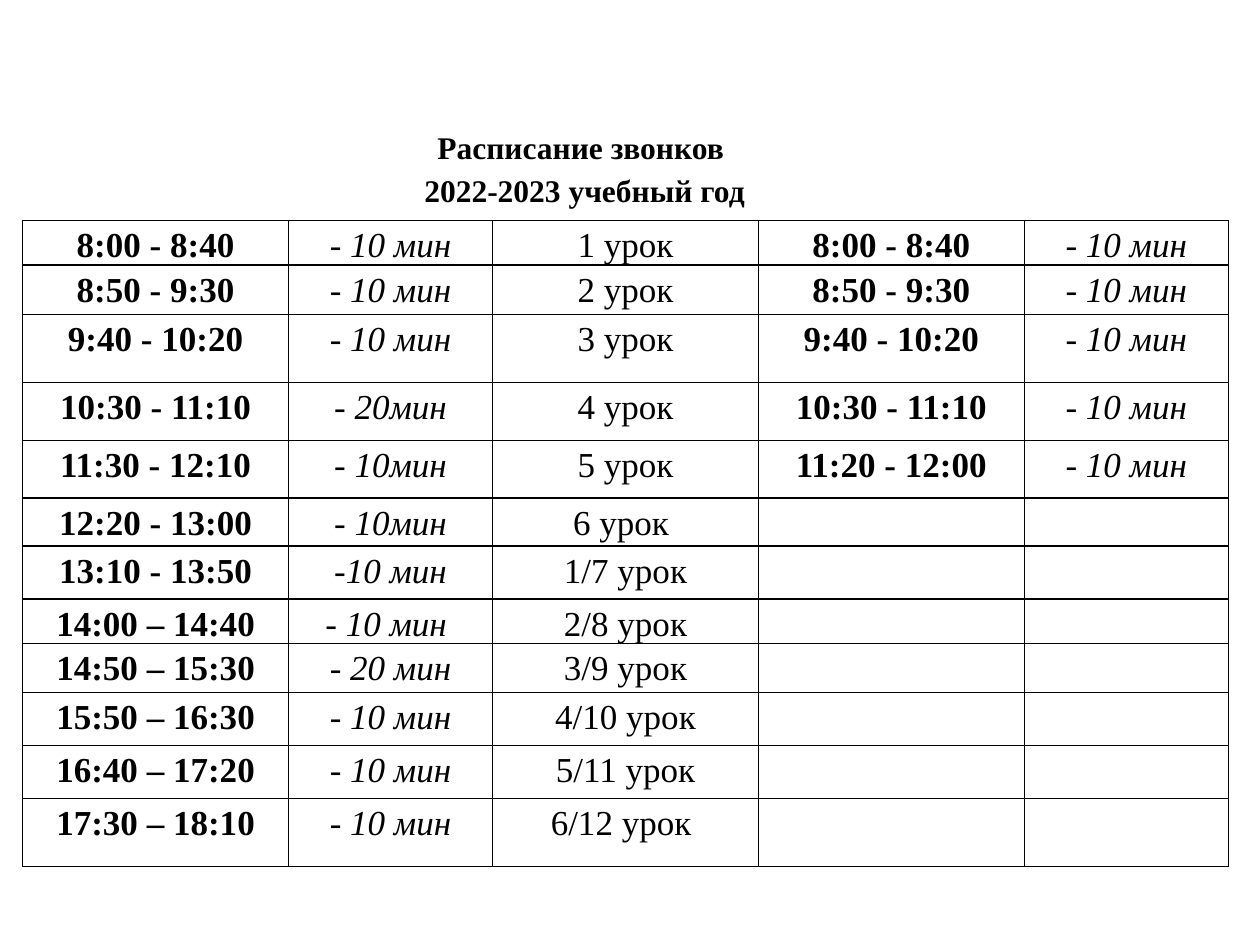
from typing import NamedTuple

from lxml.etree import SubElement
from pptx import Presentation
from pptx.dml.color import RGBColor as RGB
from pptx.enum.text import MSO_AUTO_SIZE as AutoSize, PP_ALIGN as Align
from pptx.oxml.ns import qn
from pptx.util import Inches, Pt

COLORS = {"ink": "000000", "paper": "FFFFFF"}
FONT = "Times New Roman"


class Lesson(NamedTuple):
    height: float
    time: str
    pause: str
    name: str
    short_time: str = ""
    short_pause: str = ""


PAUSE = "- 10 мин"
LESSONS = [
    Lesson(0.35, "8:00 - 8:40", PAUSE, "1 урок", "8:00 - 8:40", PAUSE),
    Lesson(0.39, "8:50 - 9:30", PAUSE, "2 урок", "8:50 - 9:30", PAUSE),
    Lesson(0.54, "9:40 - 10:20", PAUSE, "3 урок", "9:40 - 10:20", PAUSE),
    Lesson(0.46, "10:30 - 11:10", "- 20мин", "4 урок", "10:30 - 11:10", PAUSE),
    Lesson(0.46, "11:30 - 12:10", "- 10мин", "5 урок", "11:20 - 12:00", PAUSE),
    Lesson(0.38, "12:20 - 13:00", "- 10мин", "6 урок "),
    Lesson(0.42, "13:10 - 13:50", "-10 мин", "1/7 урок"),
    Lesson(0.33, "14:00 – 14:40", "- 10 мин ", "2/8 урок"),
    Lesson(0.39, "14:50 – 15:30", "- 20 мин", "3/9 урок"),
    Lesson(0.42, "15:50 – 16:30", PAUSE, "4/10 урок"),
    Lesson(0.42, "16:40 – 17:20", PAUSE, "5/11 урок"),
    Lesson(0.54, "17:30 – 18:10", PAUSE, "6/12 урок "),
]


class Column(NamedTuple):
    width: float
    style: dict


TIME = Column(2.11, {"bold": True, "italic": False})
BREAK = Column(1.62, {"bold": False, "italic": True})
NAME = Column(2.11, {"bold": False, "italic": False})
COLUMNS = [TIME, BREAK, NAME, TIME, BREAK]


def write(p, text: str, size: float, style: dict) -> None:
    p.alignment = Align.CENTER
    p.line_spacing = 1.15
    r = p.add_run()
    r.text = text
    for key, value in {"name": FONT, "size": Pt(size), **style}.items():
        setattr(r.font, key, value)
    r.font.color.rgb = RGB.from_string(COLORS["ink"])


def add_borders(cell) -> None:
    """Draw four thin lines; they must precede the cell fill in the XML."""
    props = cell._tc.get_or_add_tcPr()
    for side in ("lnL", "lnR", "lnT", "lnB"):
        line = SubElement(props, qn(f"a:{side}"), w=str(Pt(1)))
        fill = SubElement(line, qn("a:solidFill"))
        SubElement(fill, qn("a:srgbClr"), val=COLORS["ink"])


def fill_cell(cell, text: str, style: dict) -> None:
    margins = {"margin_left": 0.01, "margin_right": 0.01,
               "margin_top": 0, "margin_bottom": 0}
    for key, value in margins.items():
        setattr(cell, key, Inches(value))
    add_borders(cell)
    cell.fill.background()
    if text:
        write(cell.text_frame.paragraphs[0], text, 20, style)


def add_timetable(s) -> None:
    width = sum(c.width for c in COLUMNS)
    height = sum(lesson.height for lesson in LESSONS)
    table = s.shapes.add_table(len(LESSONS), len(COLUMNS), Inches(0.18),
                               Inches(1.75), Inches(width), Inches(height)).table
    table.first_row = table.horz_banding = False
    for i, column in enumerate(COLUMNS):
        table.columns[i].width = Inches(column.width)
    for i, (row_height, *texts) in enumerate(LESSONS):
        table.rows[i].height = Inches(row_height)
        for j, (text, column) in enumerate(zip(texts, COLUMNS)):
            fill_cell(table.cell(i, j), text, column.style)


def add_heading(s, lines: list[str]) -> None:
    sp = s.shapes.add_textbox(Inches(1.83), Inches(0.92), Inches(5.62), Inches(0.8))
    tf = sp.text_frame
    tf.word_wrap = True
    tf.auto_size = AutoSize.SHAPE_TO_FIT_TEXT
    for i, line in enumerate(lines):
        p = tf.add_paragraph() if i else tf.paragraphs[0]
        write(p, line, 18, {"bold": True})


def main() -> None:
    prs = Presentation()
    prs.slide_width, prs.slide_height = Inches(10), Inches(7.5)
    s = prs.slides.add_slide(prs.slide_layouts[6])
    s.background.fill.solid()
    s.background.fill.fore_color.rgb = RGB.from_string(COLORS["paper"])

    # Bell timetable
    add_timetable(s)
    # Heading above it
    add_heading(s, ["Расписание звонков ", "2022-2023 учебный год"])

    prs.save("out.pptx")


if __name__ == "__main__":
    main()
